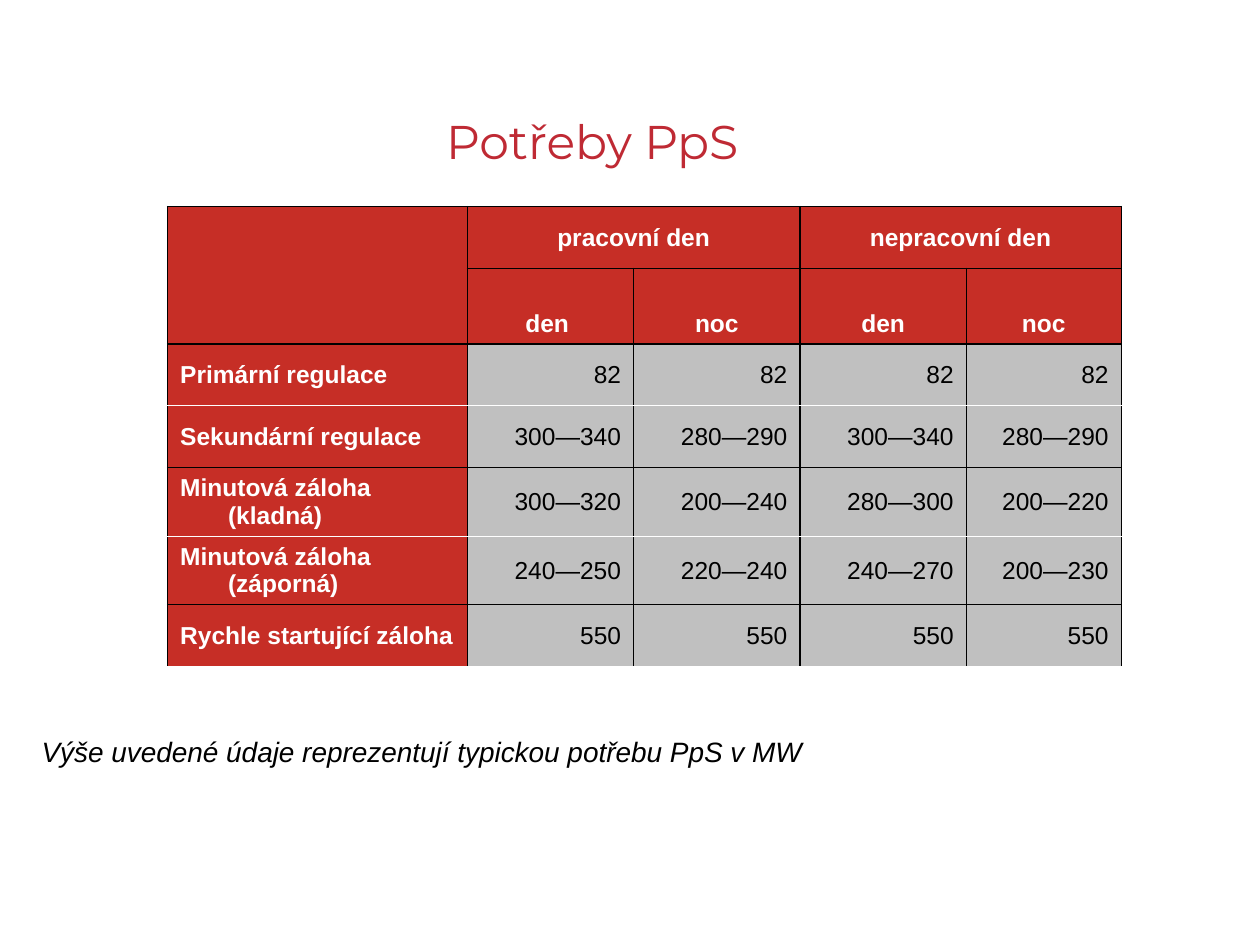
from lxml.etree import SubElement
from pptx import Presentation
from pptx.dml.color import RGBColor
from pptx.enum.text import MSO_ANCHOR, PP_ALIGN
from pptx.oxml.ns import qn
from pptx.util import Inches, Pt

TITLE = "Potřeby PpS"
NOTE = "Výše uvedené údaje reprezentují typickou potřebu PpS v MW"
DAY_TYPES = ["", "pracovní den", "", "nepracovní den", ""]
DAY_PARTS = ["", "den ", "noc", "den", "noc"]
NEEDS = [
    ["Primární regulace", "82", "82", "82", "82"],
    ["Sekundární regulace", "300—340", "280—290", "300—340", "280—290"],
    ["Minutová záloha (kladná)", "300—320", "200—240", "280—300", "200—220"],
    ["Minutová záloha (záporná)", "240—250", "220—240", "240—270", "200—230"],
    ["Rychle startující záloha", "550", "550", "550", "550"],
]
ROWS = [DAY_TYPES, DAY_PARTS, *NEEDS]
HEADER_ROWS = 2
COLUMN_WIDTHS = [2.38, 1.32, 1.32, 1.32, 1.23]
ROW_HEIGHTS = [0.49, 0.6, 0.49, 0.49, 0.55, 0.54, 0.49]
WHITE_RULES = {3, 5, 7}
HANGING = 0.38

RED = RGBColor(0xC6, 0x2E, 0x26)
TITLE_RED = RGBColor(0xBF, 0x2A, 0x34)
GRAY = RGBColor(0xC0, 0xC0, 0xC0)
BLACK = RGBColor(0, 0, 0)
WHITE = RGBColor(0xFF, 0xFF, 0xFF)


def write(frame, text, size=14, font="Arial", color=BLACK, bold=False,
          italic=False, align=PP_ALIGN.LEFT, hanging=0):
    paragraph = frame.paragraphs[0]
    paragraph.alignment = align
    properties = paragraph._p.get_or_add_pPr()
    properties.set("marL", str(Inches(hanging)))
    properties.set("indent", str(-Inches(hanging)))
    SubElement(properties, qn("a:buNone"))
    paragraph.space_before = Pt(0)
    run = paragraph.add_run()
    run.text = text
    run.font.size = Pt(size)
    run.font.name = font
    run.font.color.rgb = color
    run.font.bold = bold
    run.font.italic = italic


def place(shape, left, top, width, height):
    shape.left, shape.top = Inches(left), Inches(top)
    shape.width, shape.height = Inches(width), Inches(height)


def add_border(cell, side, color):
    line = SubElement(cell._tc.get_or_add_tcPr(), qn(f"a:ln{side}"), w=str(Pt(1)))
    fill = SubElement(line, qn("a:solidFill"))
    SubElement(fill, qn("a:srgbClr"), val=str(color))


def rule_color(index):
    return WHITE if index in WHITE_RULES else BLACK


def format_cell(cell, row, column, text):
    is_header = row < HEADER_ROWS
    is_label = is_header or column == 0
    borders = {"L": BLACK, "R": BLACK, "T": rule_color(row), "B": rule_color(row + 1)}
    for side, color in borders.items():
        add_border(cell, side, color)
    cell.fill.solid()
    cell.fill.fore_color.rgb = RED if is_label else GRAY
    cell.vertical_anchor = MSO_ANCHOR.BOTTOM if row == 1 else MSO_ANCHOR.MIDDLE
    if text:
        if is_header:
            align = PP_ALIGN.CENTER
        else:
            align = PP_ALIGN.LEFT if is_label else PP_ALIGN.RIGHT
        write(cell.text_frame, text, color=WHITE if is_label else BLACK,
              bold=is_label, align=align, hanging=HANGING)


def add_needs_table(slide):
    table = slide.shapes.add_table(
        len(ROWS), len(COLUMN_WIDTHS), Inches(1.33), Inches(1.64),
        Inches(sum(COLUMN_WIDTHS)), Inches(sum(ROW_HEIGHTS))).table
    table.first_row = table.horz_banding = False
    for column, width in zip(table.columns, COLUMN_WIDTHS):
        column.width = Inches(width)
    for row, height in zip(table.rows, ROW_HEIGHTS):
        row.height = Inches(height)
    for row, texts in enumerate(ROWS):
        for column, text in enumerate(texts):
            format_cell(table.cell(row, column), row, column, text)
    table.cell(0, 0).merge(table.cell(1, 0))
    for column in (1, 3):
        table.cell(0, column).merge(table.cell(0, column + 1))


def main():
    deck = Presentation()
    deck.slide_width, deck.slide_height = Inches(10), Inches(7.5)
    slide = deck.slides.add_slide(deck.slide_layouts[1])

    title = slide.shapes.title
    place(title, 0.2, 0.52, 9, 1.19)
    title.text_frame.vertical_anchor = MSO_ANCHOR.MIDDLE
    write(title.text_frame, TITLE, size=27, font="Montserrat",
          color=TITLE_RED, align=PP_ALIGN.CENTER)

    note = slide.placeholders[1]
    place(note, 0.23, 5.78, 8.03, 1.34)
    write(note.text_frame, NOTE, size=16, italic=True)

    add_needs_table(slide)
    deck.save("out.pptx")


if __name__ == "__main__":
    main()
